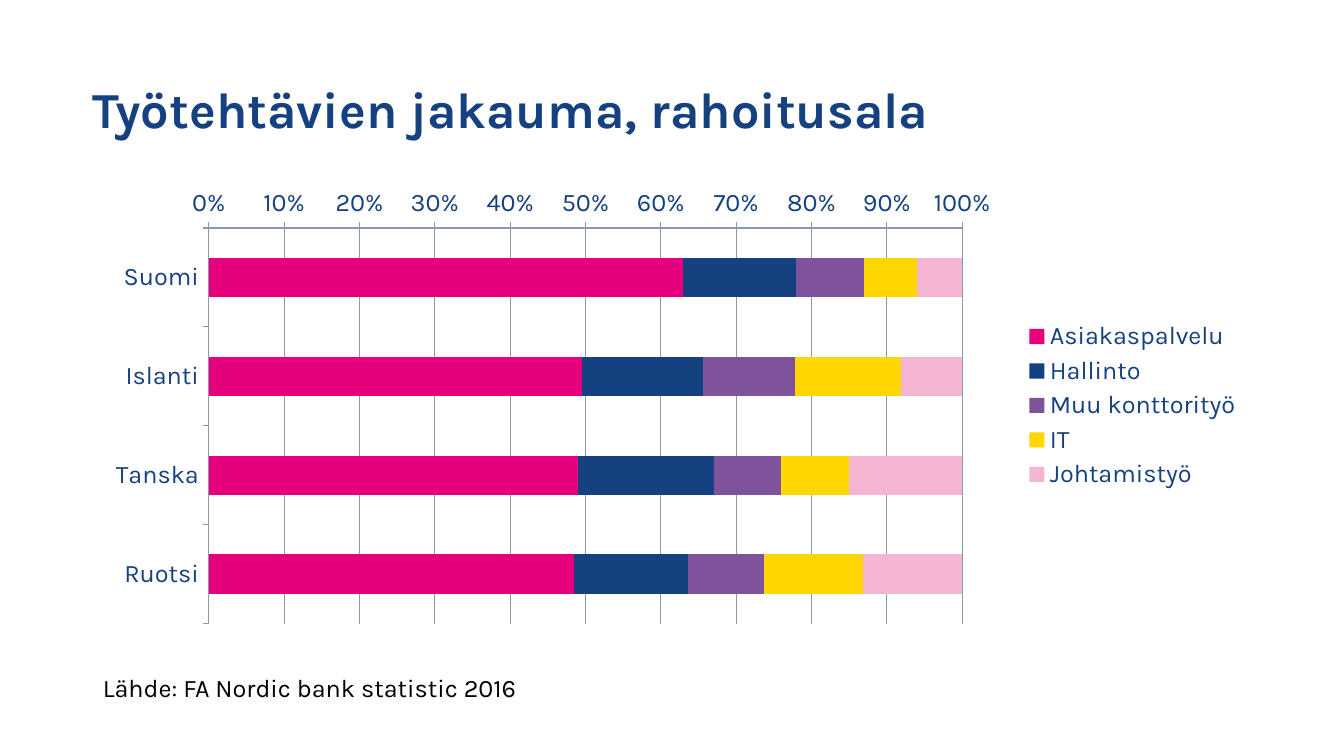
import pptx
import pptx.chart.data
import pptx.dml.color
import pptx.enum.chart
import pptx.enum.text
import pptx.oxml
import pptx.oxml.ns
import pptx.util

RGBColor = pptx.dml.color.RGBColor
WHITE = RGBColor(0xFF, 0xFF, 0xFF)
BLACK = RGBColor(0x00, 0x00, 0x00)
NAVY = RGBColor(0x16, 0x41, 0x80)
MAGENTA = RGBColor(0xE6, 0x00, 0x7E)
PURPLE = RGBColor(0x7F, 0x53, 0x9C)
YELLOW = RGBColor(0xFF, 0xD6, 0x00)
PINK = RGBColor(0xF4, 0xB5, 0xD3)
GRID = RGBColor(0x8A, 0x98, 0xB0)

EMU_PER_PX = 914400 / 100.8
WIDTH, HEIGHT = 1344, 756

COUNTRIES = ["Suomi", "Islanti", "Tanska", "Ruotsi"]
TASKS = [
    ("Asiakaspalvelu", [63, 49, 49, 48], MAGENTA),
    ("Hallinto", [15, 16, 18, 15], NAVY),
    ("Muu konttorityö", [9, 12, 9, 10], PURPLE),
    ("IT", [7, 14, 9, 13], YELLOW),
    ("Johtamistyö", [6, 8, 15, 13], PINK),
]


def px(*lengths):
    return [pptx.util.Emu(round(length * EMU_PER_PX)) for length in lengths]


def write_text(frame, text, *, size=18, color=BLACK, font="Karla", bold=False, spacing=1.0):
    paragraph = frame.paragraphs[0]
    paragraph.line_spacing = spacing
    run = paragraph.add_run()
    run.text = text
    run.font.name = font
    run.font.size = pptx.util.Pt(size)
    run.font.bold = bold
    run.font.color.rgb = color


def place_plot(chart, left, top, width, height):
    """Fix the inner plot area, given as fractions of the chart frame."""
    plot_area = chart._chartSpace.chart.plotArea
    for old in plot_area.findall(pptx.oxml.ns.qn("c:layout")):
        plot_area.remove(old)
    plot_area.insert(0, pptx.oxml.parse_xml(
        f'<c:layout {pptx.oxml.ns.nsdecls("c")}><c:manualLayout>'
        '<c:layoutTarget val="inner"/><c:xMode val="edge"/><c:yMode val="edge"/>'
        f'<c:x val="{left}"/><c:y val="{top}"/><c:w val="{width}"/><c:h val="{height}"/>'
        '</c:manualLayout></c:layout>'))


class SlideBuilder:
    def __init__(self, presentation, font="Karla", color=NAVY):
        self.font = font
        self.color = color
        self.slide = presentation.slides.add_slide(presentation.slide_layouts[6])
        self.slide.background.fill.solid()
        self.slide.background.fill.fore_color.rgb = WHITE

    def text(self, box, words, anchor=pptx.enum.text.MSO_ANCHOR.TOP, **style):
        frame = self.slide.shapes.add_textbox(*px(*box)).text_frame
        frame.word_wrap = True
        frame.vertical_anchor = anchor
        write_text(frame, words, font=self.font, **style)

    def share_chart(self, box, categories, series):
        """Add horizontal bars stacked to 100 %, first category on top."""
        data = pptx.chart.data.CategoryChartData()
        data.categories = categories
        for name, values, _ in series:
            data.add_series(name, values)
        chart = self.slide.shapes.add_chart(
            pptx.enum.chart.XL_CHART_TYPE.BAR_STACKED_100, *px(*box), data).chart
        chart.has_title = False
        chart.font.name = self.font
        chart.font.size = pptx.util.Pt(18)
        chart.font.color.rgb = self.color
        place_plot(chart, 0.1, 0.11, 0.65, 0.87)

        plot = chart.plots[0]
        plot.gap_width = 150
        plot.overlap = 100
        plot.vary_by_categories = False
        for bars, (_, _, color) in zip(plot.series, series):
            bars.format.fill.solid()
            bars.format.fill.fore_color.rgb = color

        shares = chart.value_axis
        shares.has_major_gridlines = True
        shares.major_unit = 0.1
        shares.tick_labels.number_format = "0%"
        shares.tick_labels.number_format_is_linked = False
        chart.category_axis.reverse_order = True
        for axis in (shares, chart.category_axis):
            axis.major_tick_mark = pptx.enum.chart.XL_TICK_MARK.OUTSIDE
            axis.minor_tick_mark = pptx.enum.chart.XL_TICK_MARK.NONE
        for part in (shares, chart.category_axis, shares.major_gridlines):
            part.format.line.color.rgb = GRID
            part.format.line.width = pptx.util.Pt(0.75)

        chart.has_legend = True
        chart.legend.position = pptx.enum.chart.XL_LEGEND_POSITION.RIGHT
        chart.legend.include_in_layout = False


def main():
    presentation = pptx.Presentation()
    presentation.slide_width, presentation.slide_height = px(WIDTH, HEIGHT)
    builder = SlideBuilder(presentation)
    builder.text((83, 39, 1159, 146), "Työtehtävien jakauma, rahoitusala",
                 anchor=pptx.enum.text.MSO_ANCHOR.MIDDLE,
                 size=36, color=NAVY, bold=True, spacing=0.9)
    builder.share_chart((93, 178, 1159, 455), COUNTRIES, TASKS)
    builder.text((93, 667, 626, 40), "Lähde: FA Nordic bank statistic 2016")
    presentation.save("out.pptx")


if __name__ == "__main__":
    main()
